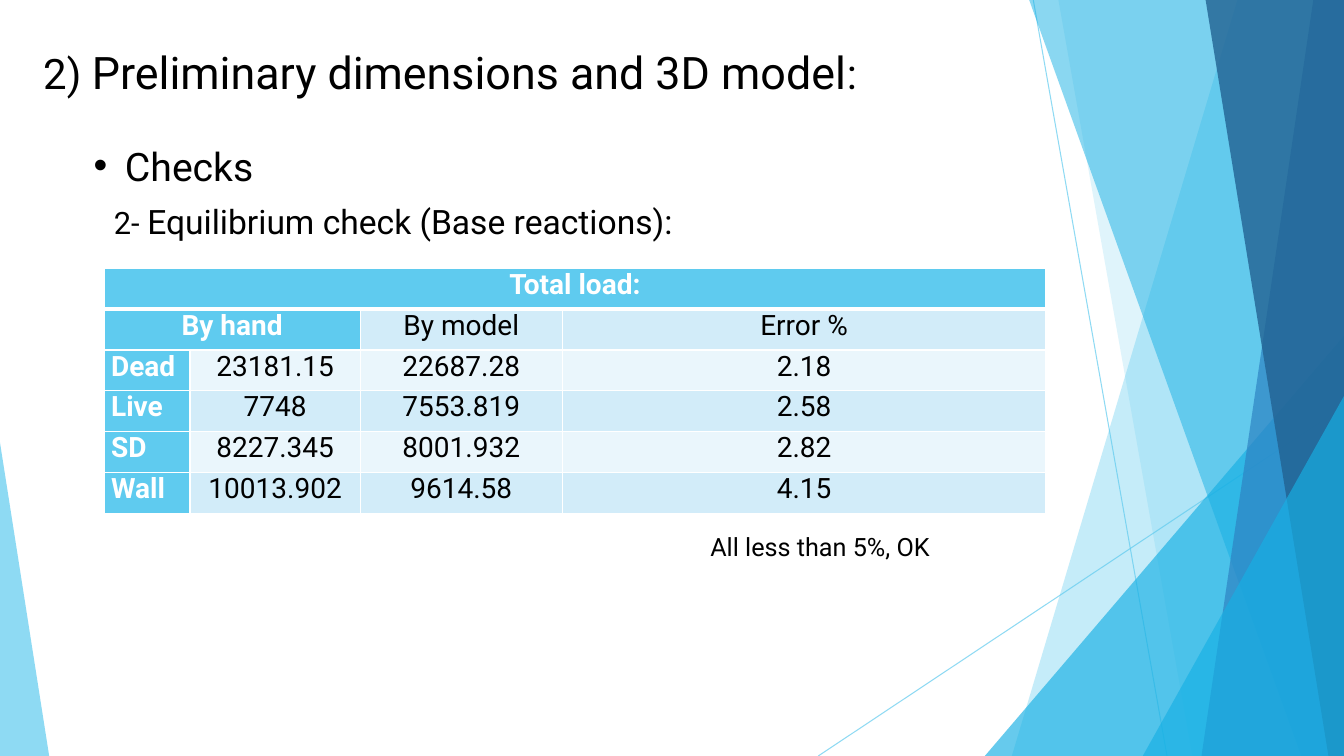
from lxml import etree
from pptx import Presentation
from pptx import util as u
from pptx.dml.color import RGBColor
from pptx.enum import shapes, text
from pptx.oxml.ns import qn

SKY = RGBColor(0x5F, 0xCB, 0xEF)
CYAN = RGBColor(0x17, 0xB0, 0xE4)
BLUE = RGBColor(0x2E, 0x83, 0xC3)
NAVY = RGBColor(0x22, 0x62, 0x92)
BAND = RGBColor(0xD2, 0xEC, 0xF9)
PALE = RGBColor(0xEA, 0xF6, 0xFC)
WHITE = RGBColor(0xFF, 0xFF, 0xFF)
BLACK = RGBColor(0, 0, 0)
WIDTH, HEIGHT = 33.87, 19.05
OVERSHOOT = -0.02


class SlideBuilder:
    """Draws styled elements on one slide, with lengths in centimetres."""

    font_name = "Roboto"

    def __init__(self, slide):
        self.slide = slide

    def set_opacity(self, element, percent):
        for color in element.spPr.iter(qn("a:srgbClr")):
            etree.SubElement(color, qn("a:alpha"), val=str(percent * 1000))

    def paint(self, shape, color, opacity):
        shape.shadow.inherit = False
        shape.line.fill.background()
        shape.fill.solid()
        shape.fill.fore_color.rgb = color
        self.set_opacity(shape.element, opacity)

    def line(self, *ends):
        connector = self.slide.shapes.add_connector(
            shapes.MSO_CONNECTOR.STRAIGHT, *map(u.Cm, ends))
        connector.line.color.rgb = SKY
        connector.line.width = u.Pt(0.75)
        self.set_opacity(connector.element, 70)
        etree.SubElement(connector.element.spPr, qn("a:effectLst"))

    def facet(self, top_left, bottom_left, color, opacity):
        corners = [(WIDTH, OVERSHOOT), (WIDTH, HEIGHT), (bottom_left, HEIGHT)]
        builder = self.slide.shapes.build_freeform(u.Cm(top_left), u.Cm(OVERSHOOT))
        builder.add_line_segments([(u.Cm(x), u.Cm(y)) for x, y in corners])
        self.paint(builder.convert_to_shape(), color, opacity)

    def triangle(self, left, top, width, apex, color, opacity):
        shape = self.slide.shapes.add_shape(
            shapes.MSO_SHAPE.ISOSCELES_TRIANGLE,
            *map(u.Cm, (left, top, width, HEIGHT - top)))
        shape.adjustments[0] = apex
        self.paint(shape, color, opacity)

    def format_run(self, run, size, color=BLACK, bold=False):
        run.font.name = self.font_name
        run.font.size = u.Pt(size)
        run.font.color.rgb = color
        run.font.bold = bold

    def text(self, left, top, width, height, *runs, bullet=False):
        box = self.slide.shapes.add_textbox(*map(u.Cm, (left, top, width, height)))
        box.text_frame.word_wrap = True
        paragraph = box.text_frame.paragraphs[0]
        if bullet:
            properties = paragraph._p.get_or_add_pPr()
            properties.set("marL", str(u.Cm(0.79)))
            properties.set("indent", str(u.Cm(-0.79)))
            etree.SubElement(properties, qn("a:buFont"), typeface="Arial")
            etree.SubElement(properties, qn("a:buChar"), char="•")
        for wording, size in runs:
            run = paragraph.add_run()
            run.text = wording
            self.format_run(run, size)

    def cell(self, cell, wording, fill, header, centered, borders):
        cell.margin_left = cell.margin_right = u.Cm(0.18)
        cell.margin_top = cell.margin_bottom = 0
        properties = cell._tc.get_or_add_tcPr()
        for side, points in zip("LRTB", borders):
            border = etree.SubElement(
                properties, qn(f"a:ln{side}"), w=str(u.Pt(points)))
            solid = etree.SubElement(border, qn("a:solidFill"))
            etree.SubElement(solid, qn("a:srgbClr"), val=str(WHITE))
        cell.fill.solid()
        cell.fill.fore_color.rgb = fill
        cell.text_frame.text = wording
        paragraph = cell.text_frame.paragraphs[0]
        if centered:
            paragraph.alignment = text.PP_ALIGN.CENTER
        for run in paragraph.runs:
            self.format_run(run, 20, WHITE if header else BLACK, header)

    def table(self, left, top, widths, row_height, rows):
        table = self.slide.shapes.add_table(
            len(rows), len(widths), u.Cm(left), u.Cm(top),
            u.Cm(sum(widths)), u.Cm(row_height * len(rows))).table
        for column, width in zip(table.columns, widths):
            column.width = u.Cm(width)
        for i, row in enumerate(rows):
            table.rows[i].height = u.Cm(row_height)
            borders = (1, 1, 3 if i == 1 else 1, 3 if i == 0 else 1)
            for j, wording in enumerate(row):
                header = i == 0 or j == 0
                fill = SKY if header else BAND if i % 2 else PALE
                self.cell(table.cell(i, j), wording, fill, header,
                          i < 2 or j > 0, borders)
        table.cell(0, 0).merge(table.cell(0, len(widths) - 1))
        table.cell(1, 0).merge(table.cell(1, 1))


def main():
    presentation = Presentation()
    presentation.slide_width = u.Cm(WIDTH)
    presentation.slide_height = u.Cm(HEIGHT)
    page = SlideBuilder(presentation.slides.add_slide(presentation.slide_layouts[6]))

    page.line(26.04, 0, 29.41, HEIGHT)
    page.line(WIDTH, 10.24, 20.62, HEIGHT)
    page.facet(31.19, 25.5, SKY, 36)
    page.facet(26.67, 30.05, SKY, 20)
    page.triangle(24.82, 8.46, 9.05, 1, CYAN, 66)
    page.facet(25.93, 32.79, CYAN, 50)
    page.facet(33.1, 30.28, BLUE, 70)
    page.facet(30.38, 33.48, NAVY, 80)
    page.triangle(28.8, 9.98, 5.07, 1, CYAN, 66)
    page.triangle(0, 11.15, 1.24, 0, SKY, 70)

    page.text(0.84, 0.99, 21.51, 1.63, ("2) ", 30),
              ("Preliminary dimensions and 3D model", 32), (":", 30))
    page.text(2.11, 3.45, 16.84, 1.45, ("Checks", 28), bullet=True)
    page.text(2.62, 4.95, 15.04, 2.24, ("2- ", 22),
              ("Equilibrium check (Base reactions):", 24))
    page.text(17.65, 13.26, 8.71, 1.02, ("All less than 5%, OK", 18))
    page.table(2.62, 6.76, (2.17, 4.29, 5.09, 12.19), 1.03, [
        ("Total load:", "", "", ""),
        ("By hand", "", "By model", "Error %"),
        ("Dead", "23181.15", "22687.28", "2.18"),
        ("Live", "7748", "7553.819", "2.58"),
        ("SD", "8227.345", "8001.932", "2.82"),
        ("Wall", "10013.902", "9614.58", "4.15"),
    ])
    presentation.save("out.pptx")


if __name__ == "__main__":
    main()
